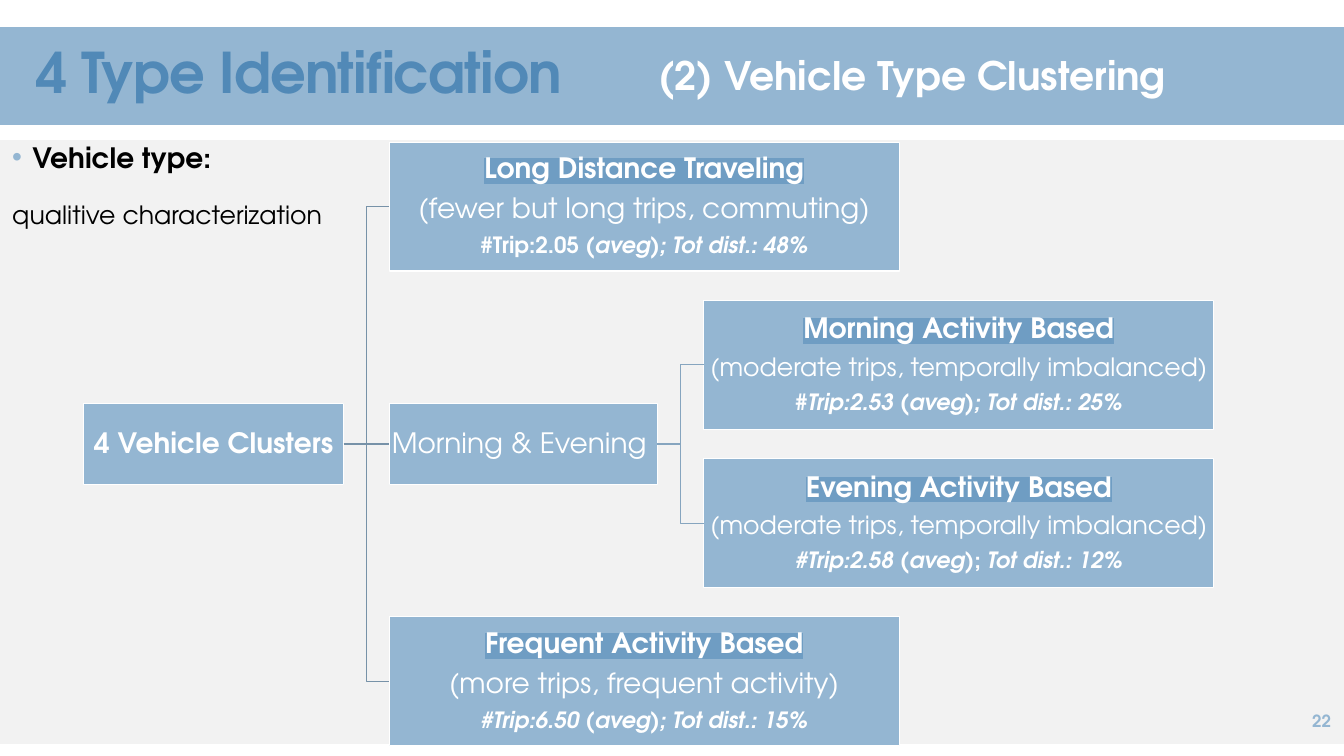
from dataclasses import dataclass
from typing import Optional

import pptx
import pptx.dml.color
import pptx.enum.shapes
import pptx.enum.text
import pptx.oxml.ns
import pptx.util
from lxml import etree
from pptx.dml.color import RGBColor
from pptx.util import Inches, Pt

FONT = "TeX Gyre Adventor"
WHITE = RGBColor(0xFF, 0xFF, 0xFF)
BLACK = RGBColor(0x00, 0x00, 0x00)
BLUE = RGBColor(0x94, 0xB6, 0xD2)
TITLE_BLUE = RGBColor(0x51, 0x89, 0xB7)
HIGHLIGHT = RGBColor(0x6F, 0x9D, 0xC3)
PANEL_GREY = RGBColor(0xF2, 0xF2, 0xF2)
ROOT_LINK = RGBColor(0x77, 0x92, 0xA8)
BRANCH_LINK = RGBColor(0x86, 0xA5, 0xBF)
LINE_WIDTH = Pt(0.85)

ALIGN = pptx.enum.text.PP_ALIGN
ANCHOR = pptx.enum.text.MSO_ANCHOR
CONNECTOR = pptx.enum.shapes.MSO_CONNECTOR
RECT = pptx.enum.shapes.MSO_SHAPE.RECTANGLE
LEFT_SITE, RIGHT_SITE = 1, 3

COLUMNS = (0.83, 3.86, 6.98)
ROW_TOP, ROW_PITCH = 1.41, 1.57
LEAF_WIDTH, LEAF_HEIGHT = 5.06, 1.28
GROUP_TOP, GROUP_HEIGHT = 4.0, 0.81


@dataclass
class TextRun:
    text: str
    size: float
    bold: bool = False
    italic: bool = False
    color: RGBColor = WHITE
    highlight: Optional[RGBColor] = None


@dataclass
class Cluster:
    name: str
    note: str
    note_size: float
    stats: list[tuple[str, bool]]  # text, italic
    column: int

    def lines(self) -> list[list[TextRun]]:
        return [
            [TextRun(self.name, 20, bold=True, highlight=HIGHLIGHT)],
            [TextRun(self.note, self.note_size)],
            [TextRun(text, 16, bold=True, italic=italic) for text, italic in self.stats],
        ]


CLUSTERS = [
    Cluster("Long Distance Traveling", "(fewer but long trips, commuting)", 20,
            [("#Trip:2.05 (", False), ("aveg); Tot dist.: 48%", True)], 1),
    Cluster("Morning Activity Based", "(moderate trips, temporally imbalanced)", 18,
            [("#", False), ("Trip:2.53 (aveg); Tot dist.: 25%", True)], 2),
    Cluster("Evening Activity Based", "(moderate trips, temporally imbalanced)", 18,
            [("#Trip:2.58 (aveg)", True), ("; ", False), ("Tot dist.: 12%", True)], 2),
    Cluster("Frequent Activity Based", "(more trips, frequent activity)", 20,
            [("#Trip:6.50 (aveg); Tot dist.: 15%", True)], 1),
]


def add_element(parent, tag: str, **attributes: str):
    return etree.SubElement(parent, pptx.oxml.ns.qn(tag), **attributes)


def add_run(p, run: TextRun):
    r = p.add_run()
    r.text = run.text
    font = r.font
    font.size, font.bold, font.italic = Pt(run.size), run.bold, run.italic
    font.color.rgb = run.color
    font.name = FONT
    if run.highlight is not None:
        rPr = r.font._element
        highlight = add_element(rPr, "a:highlight")
        add_element(highlight, "a:srgbClr", val=str(run.highlight))
        rPr.find(pptx.oxml.ns.qn("a:latin")).addprevious(highlight)
    return r


def place(sp, left: float, top: float, width: float, height: float) -> None:
    sp.left, sp.top = Inches(left), Inches(top)
    sp.width, sp.height = Inches(width), Inches(height)


def bring_to_front(sp) -> None:
    sp.element.getparent().append(sp.element)


def add_rect(s, left: float, top: float, width: float, height: float,
             fill: RGBColor, line: Optional[RGBColor] = None):
    sp = s.shapes.add_shape(RECT, Inches(left), Inches(top), Inches(width), Inches(height))
    sp.shadow.inherit = False
    sp.fill.solid()
    sp.fill.fore_color.rgb = fill
    if line is None:
        sp.line.fill.background()
    else:
        sp.line.color.rgb = line
        sp.line.width = LINE_WIDTH
    return sp


def add_node(s, left: float, top: float, width: float, height: float,
             lines: list[list[TextRun]]):
    sp = add_rect(s, left, top, width, height, BLUE, WHITE)
    tf = sp.text_frame
    tf.word_wrap = True
    tf.vertical_anchor = ANCHOR.MIDDLE
    tf.margin_left = tf.margin_right = tf.margin_top = tf.margin_bottom = Inches(0.01)
    for i, runs in enumerate(lines):
        p = tf.add_paragraph() if i else tf.paragraphs[0]
        p.alignment = ALIGN.CENTER
        p.line_spacing = 0.9
        p.space_after = Pt(0.35 * runs[0].size)
        for run in runs:
            add_run(p, run)
    return sp


def add_link(s, parent, child, color: RGBColor) -> None:
    """Join the parent's right side to the child's left side."""
    level = parent.top + parent.height // 2 == child.top + child.height // 2
    link = s.shapes.add_connector(CONNECTOR.STRAIGHT if level else CONNECTOR.ELBOW, 0, 0, 0, 0)
    link.begin_connect(parent, RIGHT_SITE)
    link.end_connect(child, LEFT_SITE)
    link.line.color.rgb = color
    link.line.width = LINE_WIDTH
    add_element(link.element.spPr, "a:effectLst")


def add_label(s, left: float, top: float, width: float, height: float,
              run: TextRun, align: ALIGN, wrap: bool) -> None:
    tf = s.shapes.add_textbox(Inches(left), Inches(top), Inches(width), Inches(height)).text_frame
    tf.word_wrap = wrap
    tf.vertical_anchor = ANCHOR.MIDDLE
    p = tf.paragraphs[0]
    p.alignment = align
    add_run(p, run)


def fill_title(title) -> None:
    place(title, 0.26, 0.12, 7.42, 1.26)
    tf = title.text_frame
    tf.auto_size = pptx.enum.text.MSO_AUTO_SIZE.NONE
    tf.vertical_anchor = ANCHOR.MIDDLE
    p = tf.paragraphs[0]
    p.alignment = ALIGN.LEFT
    p.line_spacing = 0.9
    r = add_run(p, TextRun("4 Type Identification", 40, bold=True, color=TITLE_BLUE))
    r.font._element.set("spc", "-60")


def fill_body(body) -> None:
    place(body, 0.02, 1.34, 11.66, 1.58)
    tf = body.text_frame
    tf.auto_size = pptx.enum.text.MSO_AUTO_SIZE.NONE
    heading, note = tf.paragraphs[0], tf.add_paragraph()
    for p, indent in ((heading, 0.2), (note, 0)):
        p.space_before, p.space_after = Pt(12), Pt(6)
        pPr = p._p.get_or_add_pPr()
        pPr.set("marL", str(Inches(indent)))
        pPr.set("indent", str(-Inches(indent)))
    bullet_color = add_element(heading._p.pPr, "a:buClr")
    add_element(bullet_color, "a:srgbClr", val=str(BLUE))
    add_element(heading._p.pPr, "a:buChar", char="•")
    add_element(note._p.pPr, "a:buNone")
    add_run(heading, TextRun("Vehicle type:", 20, bold=True, color=BLACK))
    add_run(note, TextRun("qualitive characterization", 18, color=BLACK))


def main() -> None:
    prs = pptx.Presentation()
    prs.slide_width, prs.slide_height = Inches(13.33), Inches(7.5)
    s = prs.slides.add_slide(prs.slide_layouts[1])
    title, body = s.shapes.title, s.placeholders[1]

    add_rect(s, 0, 0.27, 13.33, 0.97, BLUE)
    add_rect(s, 0, 1.39, 13.33, 5.99, PANEL_GREY, PANEL_GREY)
    fill_title(title)
    fill_body(body)
    bring_to_front(title)
    bring_to_front(body)
    add_label(s, 6.43, 0.46, 5.46, 0.57,
              TextRun("(2) Vehicle Type Clustering", 28, bold=True), ALIGN.LEFT, False)

    root = add_node(s, COLUMNS[0], GROUP_TOP, 2.58, GROUP_HEIGHT,
                    [[TextRun("4 Vehicle Clusters", 20, bold=True)]])
    group = add_node(s, COLUMNS[1], GROUP_TOP, 2.66, GROUP_HEIGHT,
                     [[TextRun("Morning & Evening ", 20)]])
    add_link(s, root, group, ROOT_LINK)
    for row, cluster in enumerate(CLUSTERS):
        leaf = add_node(s, COLUMNS[cluster.column], ROW_TOP + row * ROW_PITCH,
                        LEAF_WIDTH, LEAF_HEIGHT, cluster.lines())
        if cluster.column == 1:
            add_link(s, root, leaf, ROOT_LINK)
        else:
            add_link(s, group, leaf, BRANCH_LINK)

    add_label(s, 11.63, 6.95, 1.67, 0.4,
              TextRun("22", 12, bold=True, color=BLUE), ALIGN.RIGHT, True)
    prs.save("out.pptx")


if __name__ == "__main__":
    main()
